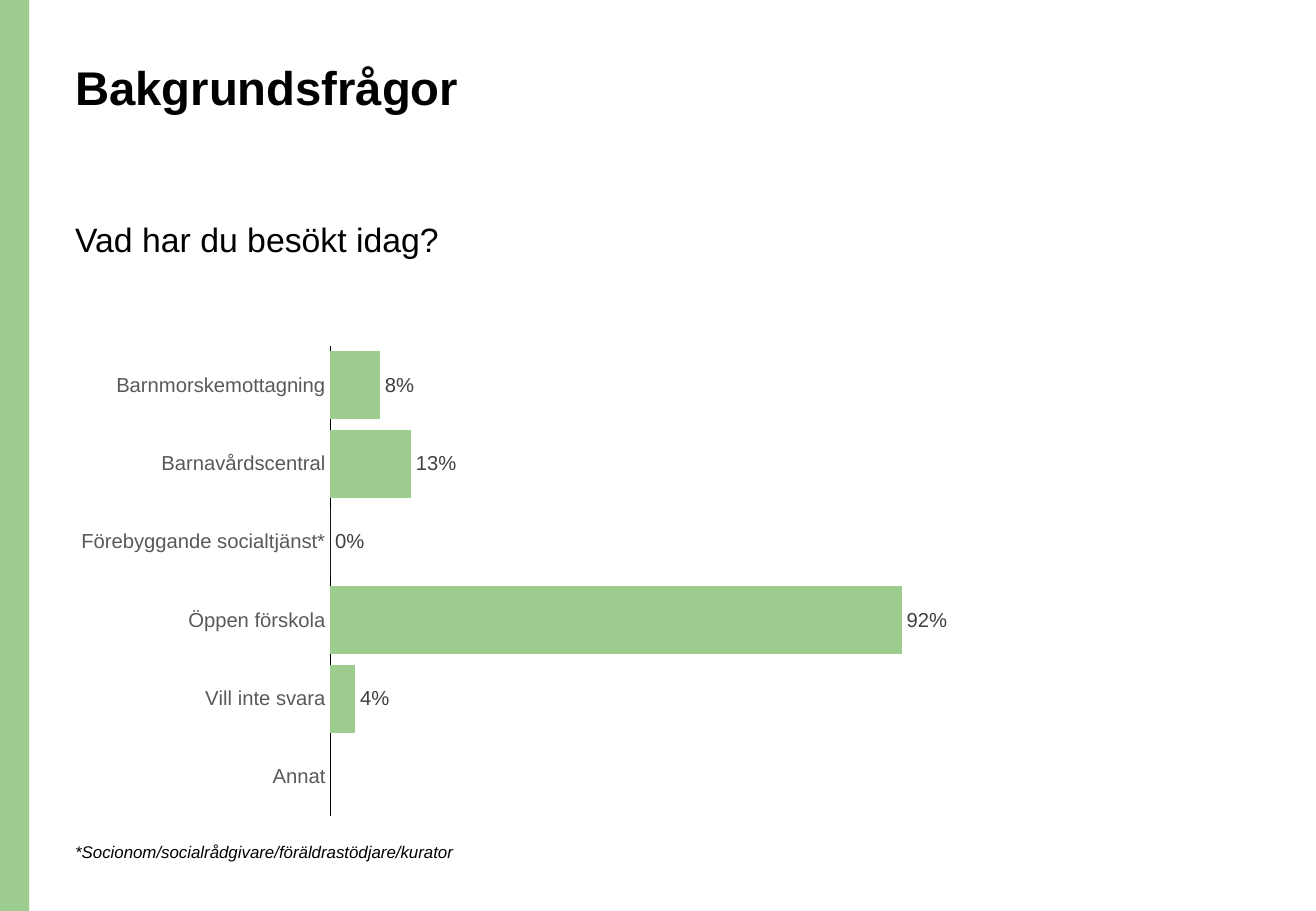
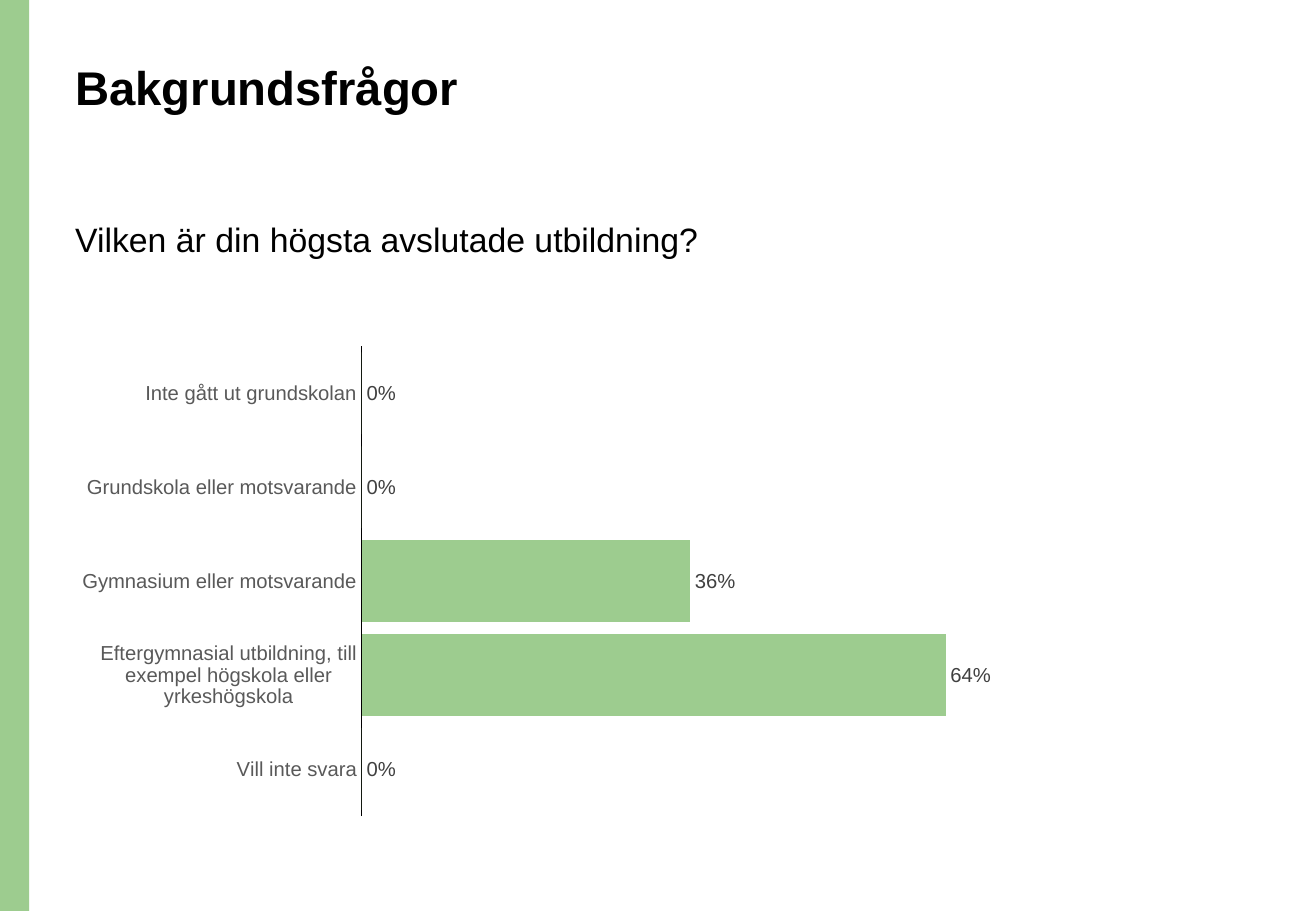
from pptx import Presentation
from pptx.chart.data import CategoryChartData
from pptx.dml.color import RGBColor
from pptx.enum import chart as charts, shapes, text
from pptx.util import Inches, Pt

GREEN = "9DCC8F"
BLACK = "000000"
LABEL_GRAY = "595959"
VALUE_GRAY = "404040"
FONT = "Arial"
LEFT = Inches(0.52)


def color(value):
    return RGBColor.from_string(value)


def write(shape, words, size, bold=False, italic=False, spacing=None):
    frame = shape.text_frame
    frame.word_wrap = True
    frame.auto_size = text.MSO_AUTO_SIZE.NONE
    frame.vertical_anchor = text.MSO_ANCHOR.TOP
    paragraph = frame.paragraphs[0]
    paragraph.alignment = text.PP_ALIGN.LEFT
    paragraph.line_spacing = spacing
    run = paragraph.add_run()
    run.text = words
    run.font.name = FONT
    run.font.size = Pt(size)
    run.font.bold = bold
    run.font.italic = italic
    run.font.color.rgb = color(BLACK)


questions = [
    {
        "question": "Vad har du besökt idag?",
        "answers": {
            "Barnmorskemottagning": 0.08,
            "Barnavårdscentral": 0.13,
            "Förebyggande socialtjänst*": 0,
            "Öppen förskola": 0.92,
            "Vill inte svara": 0.04,
            "Annat": None,
        },
        "question_width": 6.5,
        "chart_width": 7.46,
        "maximum": 1,
        "footnote": "*Socionom/socialrådgivare/föräldrastödjare/kurator",
    },
    {
        "question": "Vilken är din högsta avslutade utbildning?",
        "answers": {
            "Inte gått ut grundskolan": 0,
            "Grundskola eller motsvarande": 0,
            "Gymnasium eller motsvarande": 0.36,
            "Eftergymnasial utbildning, till exempel högskola eller yrkeshögskola": 0.64,
            "Vill inte svara": 0,
        },
        "question_width": 6.03,
        "chart_width": 7.87,
        "maximum": 0.7,
        "footnote": None,
    },
]

presentation = Presentation()
presentation.slide_width = Inches(10.83)
presentation.slide_height = Inches(7.5)
layout = presentation.slide_layouts[5]

for item in questions:
    slide = presentation.slides.add_slide(layout)

    band = slide.shapes.add_shape(
        shapes.MSO_SHAPE.RECTANGLE, 0, 0, Inches(0.24), presentation.slide_height)
    band.shadow.inherit = False
    band.fill.solid()
    band.fill.fore_color.rgb = color(GREEN)
    band.line.fill.background()

    title = slide.shapes.title
    title.left, title.top = LEFT, Inches(0.48)
    title.width, title.height = Inches(9.34), Inches(1.02)
    write(title, "Bakgrundsfrågor", 28, bold=True, spacing=0.9)

    question = slide.shapes.add_textbox(
        LEFT, Inches(1.79), Inches(item["question_width"]), Inches(0.74))
    write(question, item["question"], 20, spacing=0.9)

    data = CategoryChartData(number_format="0%")
    data.categories = item["answers"].keys()
    data.add_series("Series 1", item["answers"].values())
    chart = slide.shapes.add_chart(
        charts.XL_CHART_TYPE.BAR_CLUSTERED, LEFT, Inches(2.77),
        Inches(item["chart_width"]), Inches(4.03), data).chart
    chart.has_legend = False
    chart.has_title = False
    chart.font.name = FONT
    chart.font.size = Pt(10)
    chart.font.color.rgb = color(BLACK)

    category_axis = chart.category_axis
    category_axis.reverse_order = True
    category_axis.has_major_gridlines = False
    category_axis.major_tick_mark = charts.XL_TICK_MARK.NONE
    category_axis.minor_tick_mark = charts.XL_TICK_MARK.NONE
    category_axis.format.line.color.rgb = color(BLACK)
    category_axis.format.line.width = Pt(0.75)

    value_axis = chart.value_axis
    value_axis.visible = False
    value_axis.has_major_gridlines = False
    value_axis.minimum_scale = 0
    value_axis.maximum_scale = item["maximum"]

    plot = chart.plots[0]
    plot.gap_width = 15
    plot.vary_by_categories = False
    series = plot.series[0]
    series.invert_if_negative = False
    series.format.fill.solid()
    series.format.fill.fore_color.rgb = color(GREEN)

    labels = series.data_labels
    labels.show_value = True
    labels.number_format = "0%"
    labels.number_format_is_linked = False
    labels.position = charts.XL_LABEL_POSITION.OUTSIDE_END

    for font, shade in ((category_axis.tick_labels.font, LABEL_GRAY),
                        (labels.font, VALUE_GRAY)):
        font.name = FONT
        font.size = Pt(12)
        font.color.rgb = color(shade)

    if item["footnote"]:
        footnote = slide.shapes.add_textbox(
            LEFT, Inches(6.88), Inches(5.42), Inches(0.27))
        write(footnote, item["footnote"], 10, italic=True)

presentation.save("out.pptx")
